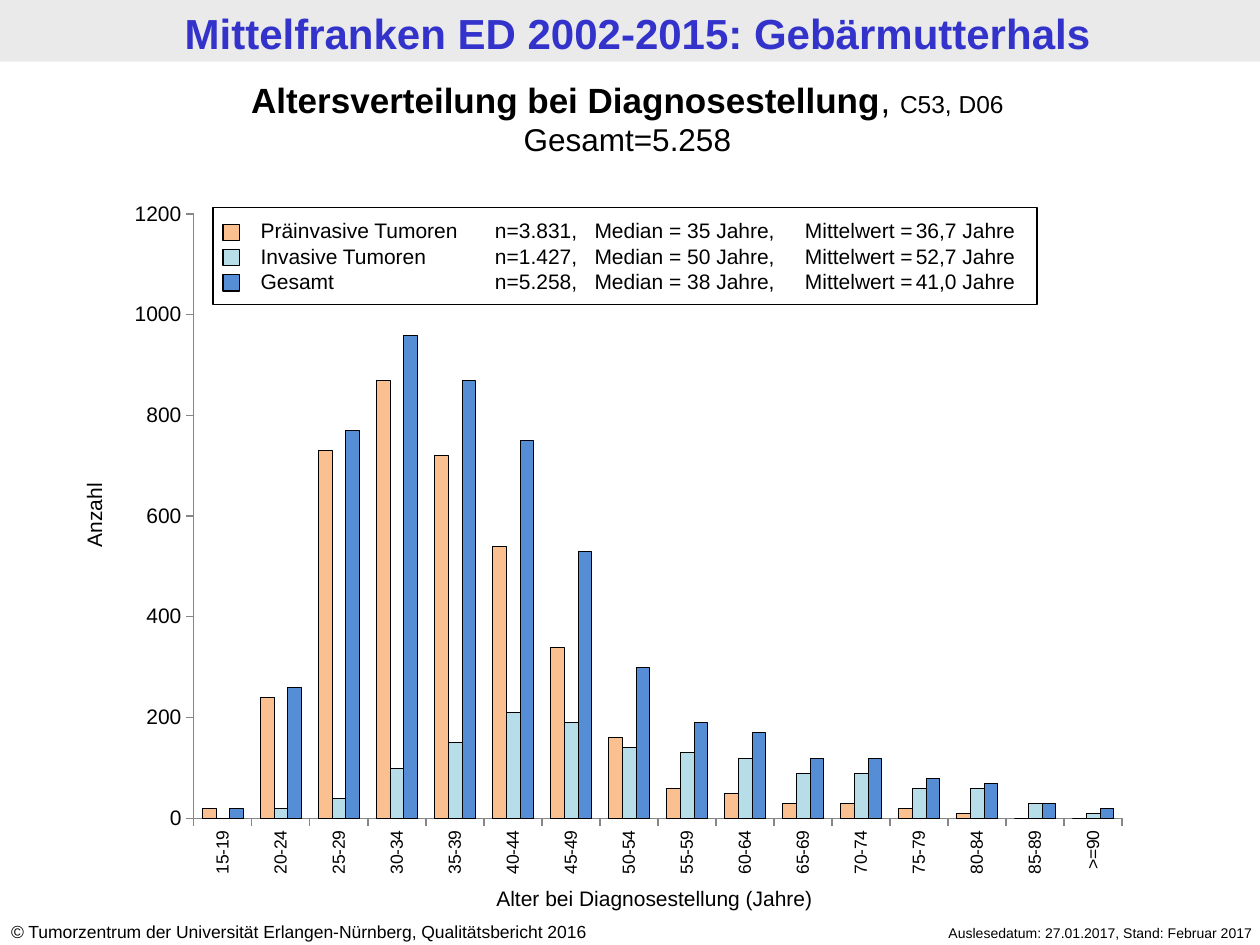
"""Build the slide on age at diagnosis on a grid of 100 columns and 75 rows."""
from lxml import etree
from pptx import Presentation
from pptx import util as u
from pptx.chart import data as cd
from pptx.dml.color import RGBColor
from pptx.enum import chart as ch, shapes, text
from pptx.oxml import ns

COLS, ROWS = 100, 75
WIDE, HIGH = u.Inches(10), u.Inches(7.5)
BLACK = RGBColor(0, 0, 0)
GRAY = RGBColor(0xEA, 0xEA, 0xEA)
AXIS = RGBColor(0x86, 0x86, 0x86)
WHITE = RGBColor(0xFF, 0xFF, 0xFF)
TITLE = RGBColor(0x33, 0x33, 0xCC)
PEACH = RGBColor(0xFA, 0xC0, 0x90)
AQUA = RGBColor(0xB7, 0xDE, 0xE8)
BLUE = RGBColor(0x55, 0x8E, 0xD5)
LEFT, MID, RIGHT = text.PP_ALIGN.LEFT, text.PP_ALIGN.CENTER, text.PP_ALIGN.RIGHT

AGES = [f"{age}-{age + 4}" for age in range(15, 90, 5)] + [">=90"]
GROUPS = [
    ("Präinvasive Tumoren", "3.831", "35", "36,7", PEACH,
     (20, 240, 730, 870, 720, 540, 340, 160, 60, 50, 30, 30, 20, 10, 0, 0)),
    ("Invasive Tumoren", "1.427", "50", "52,7", AQUA,
     (0, 20, 40, 100, 150, 210, 190, 140, 130, 120, 90, 90, 60, 60, 30, 10)),
    ("Gesamt", "5.258", "38", "41,0", BLUE,
     (20, 260, 770, 960, 870, 750, 530, 300, 190, 170, 120, 120, 80, 70, 30, 20)),
]
TABS = [(1.86, "l"), (2.46, "r"), (2.65, "l"), (4.32, "l"), (5.2, "l")]


def area(col, row, cols, rows):
    """Turn grid units into left, top, width and height."""
    return (round(WIDE * col / COLS), round(HIGH * row / ROWS),
            round(WIDE * cols / COLS), round(HIGH * rows / ROWS))


def style(font, size, color=BLACK, bold=False, name="Arial"):
    """Set the look of a font."""
    font.name, font.size, font.bold = name, u.Pt(size), bold
    font.color.rgb = color


def rect(slide, place, fill=None, line=None):
    """Draw a rectangle with an optional fill and outline."""
    box = slide.shapes.add_shape(shapes.MSO_SHAPE.RECTANGLE, *area(*place))
    box.shadow.inherit = False
    if fill is None:
        box.fill.background()
    else:
        box.fill.solid()
        box.fill.fore_color.rgb = fill
    if line is None:
        box.line.fill.background()
    else:
        box.line.color.rgb = line
        box.line.width = u.Pt(0.75)


def frame(slide, place, turn=0):
    """Add a wrapping text box and return its text frame."""
    box = slide.shapes.add_textbox(*area(*place))
    box.rotation = turn
    box.text_frame.word_wrap = True
    return box.text_frame


def label(slide, place, words, size, align=MID, color=BLACK, bold=False, turn=0):
    """Add a text box with one line in one style."""
    para = frame(slide, place, turn).paragraphs[0]
    para.text, para.alignment = words, align
    style(para.font, size, color, bold)


def heading(slide, place):
    """Add the heading in mixed sizes with the total below."""
    body = frame(slide, place)
    first, last = body.paragraphs[0], body.add_paragraph()
    parts = [("Altersverteilung bei Diagnosestellung", 20, True),
             (", ", 20, False), ("C53, D06", 14, False)]
    for words, size, bold in parts:
        run = first.add_run()
        run.text = words
        style(run.font, size, bold=bold)
    last.text = "Gesamt=5.258"
    style(last.font, 18)
    first.alignment = last.alignment = MID


def stops(para):
    """Give a paragraph the tab stops of the legend."""
    tabs = etree.SubElement(para._p.get_or_add_pPr(), ns.qn("a:tabLst"))
    for inch, side in TABS:
        etree.SubElement(tabs, ns.qn("a:tab"), pos=str(u.Inches(inch)), algn=side)


def legend(slide):
    """Add the framed key with counts, medians and means."""
    body = frame(slide, (19.7, 16.8, 64.2, 7.1))
    rect(slide, (16.9, 16.5, 65.4, 7.7), line=BLACK)
    for pos, (name, count, median, mean, color, _) in enumerate(GROUPS):
        para = body.add_paragraph() if pos else body.paragraphs[0]
        stops(para)
        para.text = (f"{name}\tn=\t{count},\tMedian = {median} Jahre,"
                     f"\tMittelwert =\t{mean} Jahre")
        style(para.font, 12)
        rect(slide, (17.7, 17.8 + 2 * pos, 1.3, 1.3), color, BLACK)


def layout(plot):
    """Fix the inner plot area as shares of the chart."""
    area_el = plot._element.getparent()
    for old in area_el.findall(ns.qn("c:layout")):
        area_el.remove(old)
    outer = etree.Element(ns.qn("c:layout"))
    inner = etree.SubElement(outer, ns.qn("c:manualLayout"))
    vals = {"layoutTarget": "inner", "xMode": "edge", "yMode": "edge",
            "x": "0.077", "y": "0.036", "w": "0.903", "h": "0.864"}
    for tag, val in vals.items():
        etree.SubElement(inner, ns.qn(f"c:{tag}"), val=val)
    area_el.insert(0, outer)


def axes(chart):
    """Style both axes and turn the age labels upright."""
    ages, counts = chart.category_axis, chart.value_axis
    for axis, size in ((ages, 10), (counts, 12)):
        axis.has_major_gridlines = False
        axis.major_tick_mark = ch.XL_TICK_MARK.OUTSIDE
        axis.format.line.color.rgb = AXIS
        style(axis.tick_labels.font, size)
    counts.minimum_scale, counts.maximum_scale, counts.major_unit = 0, 1200, 200
    turn = ages._element.find(ns.qn("c:txPr")).find(ns.qn("a:bodyPr"))
    turn.set("rot", "-5400000")
    turn.set("vert", "horz")


def graph(slide, place):
    """Add the clustered columns by age group."""
    data = cd.CategoryChartData()
    data.categories = AGES
    for name, *_, vals in GROUPS:
        data.add_series(name, vals)
    kind = ch.XL_CHART_TYPE.COLUMN_CLUSTERED
    chart = slide.shapes.add_chart(kind, *area(*place), data).chart
    chart.has_legend = chart.has_title = False
    style(chart.font, 18, name="Calibri")
    plot = chart.plots[0]
    plot.gap_width, plot.overlap, plot.vary_by_categories = 124, 0, False
    for bars, group in zip(plot.series, GROUPS):
        bars.format.fill.solid()
        bars.format.fill.fore_color.rgb = group[4]
        bars.format.line.color.rgb = BLACK
        bars.format.line.width = u.Pt(0.25)
    layout(plot)
    axes(chart)


def main():
    """Build and save the slide."""
    deck = Presentation()
    deck.slide_width, deck.slide_height = WIDE, HIGH
    slide = deck.slides.add_slide(deck.slide_layouts[6])
    slide.background.fill.solid()
    slide.background.fill.fore_color.rgb = WHITE
    rect(slide, (0, 0, COLS, 4.9), GRAY)
    label(slide, (0.6, 0.1, COLS, 4.9),
          "Mittelfranken ED 2002-2015: Gebärmutterhals", 24, color=TITLE, bold=True)
    label(slide, (-0.1, 72.6, 52.4, 2.7),
          "© Tumorzentrum der Universität Erlangen-Nürnberg, Qualitätsbericht 2016",
          10, LEFT)
    label(slide, (66.5, 72.9, 33.9, 2.4),
          "Auslesedatum: 27.01.2017, Stand: Februar 2017", 8, RIGHT)
    heading(slide, (-0.4, 5.7, 100.4, 7.4))
    graph(slide, (9.1, 15, 81.6, 55.5))
    label(slide, (36.6, 69.8, 30.7, 3), "Alter bei Diagnosestellung (Jahre)", 12)
    label(slide, (-5.6, 39.4, 26.1, 3), "Anzahl", 12, turn=270)
    legend(slide)
    deck.save("out.pptx")


if __name__ == "__main__":
    main()
